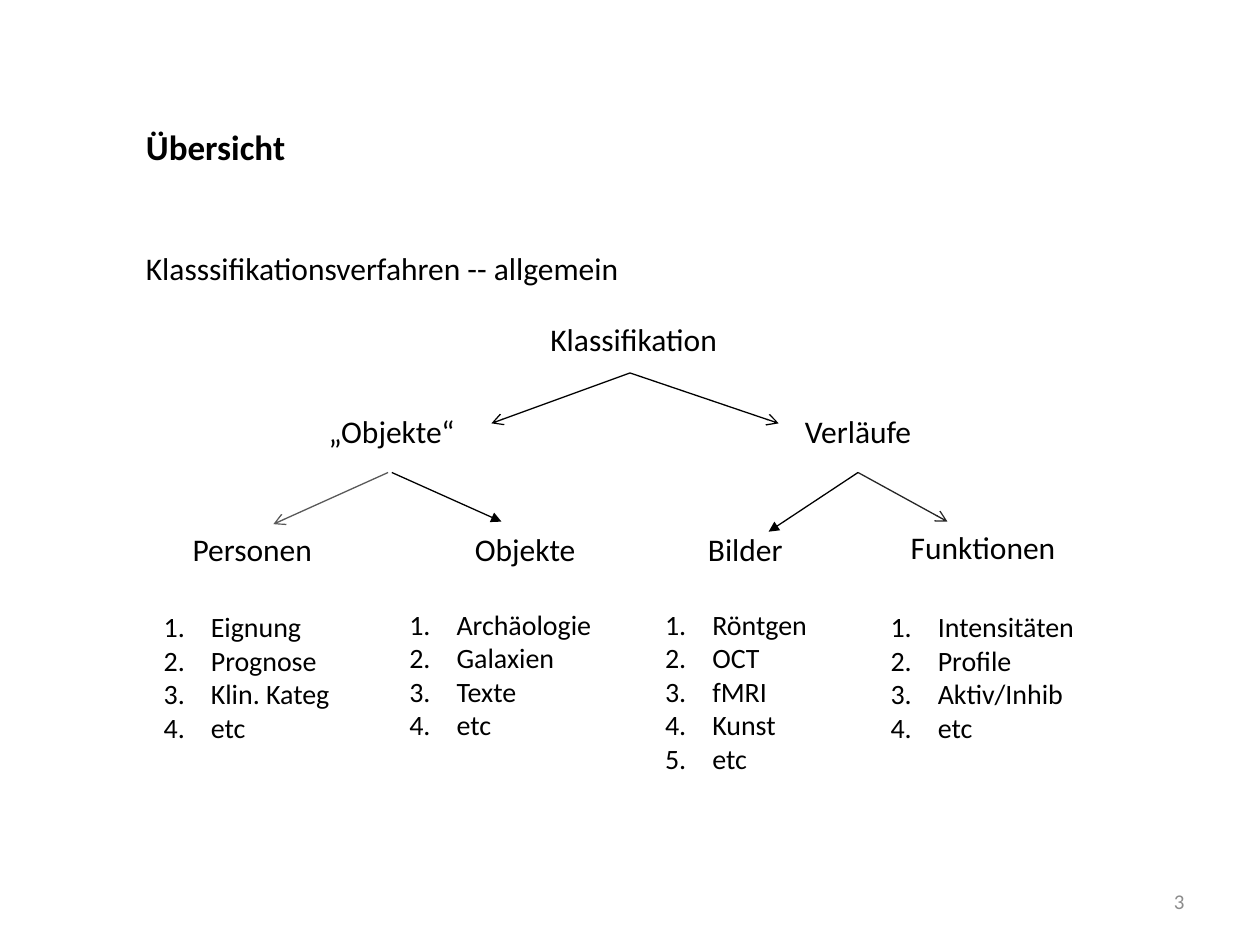
import dataclasses

import lxml.etree
import pptx
import pptx.dml.color
import pptx.enum.shapes
import pptx.enum.text
import pptx.oxml.ns
import pptx.util

COLUMNS, ROWS = 100, 75
CELL = pptx.util.Inches(0.1)


@dataclasses.dataclass(frozen=True)
class Theme:
    font: str = "Calibri"
    ink: str = "000000"
    dark: str = "262626"
    medium: str = "595959"
    pale: str = "8C8C8C"
    title: int = 20
    body: int = 18
    item: int = 16
    number: int = 12
    stroke: float = 0.75
    indent: float = 3.75


@dataclasses.dataclass(frozen=True)
class Box:
    """An area measured in columns and rows of the page grid."""
    left: float
    top: float
    width: float
    height: float

    def inner(self, left, top, width, height):
        return Box(self.left + left, self.top + top, width, height)


THEME = Theme()


def grid(count):
    return round(count * CELL)


def add_text(page, box, lines, size, color=THEME.ink, bold=False):
    shape = page.shapes.add_textbox(
        grid(box.left), grid(box.top), grid(box.width), grid(box.height))
    frame = shape.text_frame
    frame.word_wrap = True
    frame.auto_size = pptx.enum.text.MSO_AUTO_SIZE.SHAPE_TO_FIT_TEXT
    for index, line in enumerate(lines):
        para = frame.paragraphs[0] if index == 0 else frame.add_paragraph()
        span = para.add_run()
        span.text = line
        span.font.name = THEME.font
        span.font.size = pptx.util.Pt(size)
        span.font.bold = bold
        span.font.color.rgb = pptx.dml.color.RGBColor.from_string(color)
    return frame


def hang(para, numbered=False):
    """Give a paragraph a hanging indent and, if asked, automatic numbers."""
    properties = para._p.get_or_add_pPr()
    properties.set("marL", str(grid(THEME.indent)))
    properties.set("indent", str(-grid(THEME.indent)))
    if numbered:
        lxml.etree.SubElement(
            properties, pptx.oxml.ns.qn("a:buAutoNum"), type="arabicPeriod")


def add_arrow(page, box, start, end, color, head):
    line = page.shapes.add_connector(
        pptx.enum.shapes.MSO_CONNECTOR.STRAIGHT,
        grid(box.left + start[0]), grid(box.top + start[1]),
        grid(box.left + end[0]), grid(box.top + end[1]))
    line.line.color.rgb = pptx.dml.color.RGBColor.from_string(color)
    line.line.width = pptx.util.Pt(THEME.stroke)
    lxml.etree.SubElement(
        line.line._get_or_add_ln(), pptx.oxml.ns.qn("a:tailEnd"), type=head)
    lxml.etree.SubElement(
        line._element.spPr, pptx.oxml.ns.qn("a:effectLst"))


def add_heading(page, box):
    add_text(page, box.inner(0, 0, 53.8, 4.3), ["Übersicht"],
             THEME.title, bold=True)
    frame = add_text(page, box.inner(0, 9.8, box.width, 4),
                     ["Klasssifikationsverfahren -- allgemein"], THEME.body)
    hang(frame.paragraphs[0])


def add_tree(page, box):
    topics = [
        ("Klassifikation", 30.7, 0, 16.8),
        ("„Objekte“", 13.1, 7.3, 12.8),
        ("Verläufe", 50.9, 7.3, 12),
        ("Personen", 2.3, 16.7, 15.2),
        ("Objekte", 24.7, 16.7, 11.2),
        ("Bilder", 43.2, 16.7, 8.9),
        ("Funktionen", 59.3, 16.5, 14.4),
    ]
    for name, left, top, width in topics:
        add_text(page, box.inner(left, top, width, 4), [name], THEME.body)

    root, right = (38, 4.7), (56.1, 12.6)
    arrows = [
        (root, (27, 8.7), THEME.ink, "arrow"),
        (root, (49.8, 8.7), THEME.ink, "arrow"),
        ((18.8, 12.6), (9.7, 16.7), THEME.medium, "arrow"),
        ((19.1, 12.6), (27.8, 16.5), THEME.ink, "triangle"),
        (right, (49, 17.3), THEME.ink, "triangle"),
        (right, (63.2, 16.5), THEME.dark, "arrow"),
    ]
    for start, end, color, head in arrows:
        add_arrow(page, box, start, end, color, head)


def add_examples(page, box):
    examples = [
        (0, 0.2, 16.8, ["Eignung", "Prognose", "Klin. Kateg", "etc"]),
        (19.5, 0, 17.5, ["Archäologie", "Galaxien", "Texte", "etc"]),
        (39.8, 0, 15.2, ["Röntgen", "OCT", "fMRI", "Kunst", "etc"]),
        (57.7, 0.2, 22.3, ["Intensitäten", "Profile", "Aktiv/Inhib", "etc"]),
    ]
    for left, top, width, items in examples:
        height = 1 + 2.68 * len(items)
        frame = add_text(page, box.inner(left, top, width, height),
                         items, THEME.item)
        for para in frame.paragraphs:
            hang(para, numbered=True)


def add_page_number(page, box):
    frame = add_text(page, box, ["3"], THEME.number, THEME.pale)
    frame.auto_size = pptx.enum.text.MSO_AUTO_SIZE.NONE
    frame.vertical_anchor = pptx.enum.text.MSO_ANCHOR.MIDDLE
    frame.paragraphs[0].alignment = pptx.enum.text.PP_ALIGN.RIGHT


def main():
    deck = pptx.Presentation()
    deck.slide_width, deck.slide_height = grid(COLUMNS), grid(ROWS)
    page = deck.slides.add_slide(deck.slide_layouts[6])
    add_heading(page, Box(10.6, 9.5, 75.6, 13.8))
    add_tree(page, Box(12, 24.9, 80, 20.7))
    add_examples(page, Box(12, 47.7, 80, 14.4))
    add_page_number(page, Box(71.7, 69.5, 23.3, 4))
    deck.save("out.pptx")


if __name__ == "__main__":
    main()
